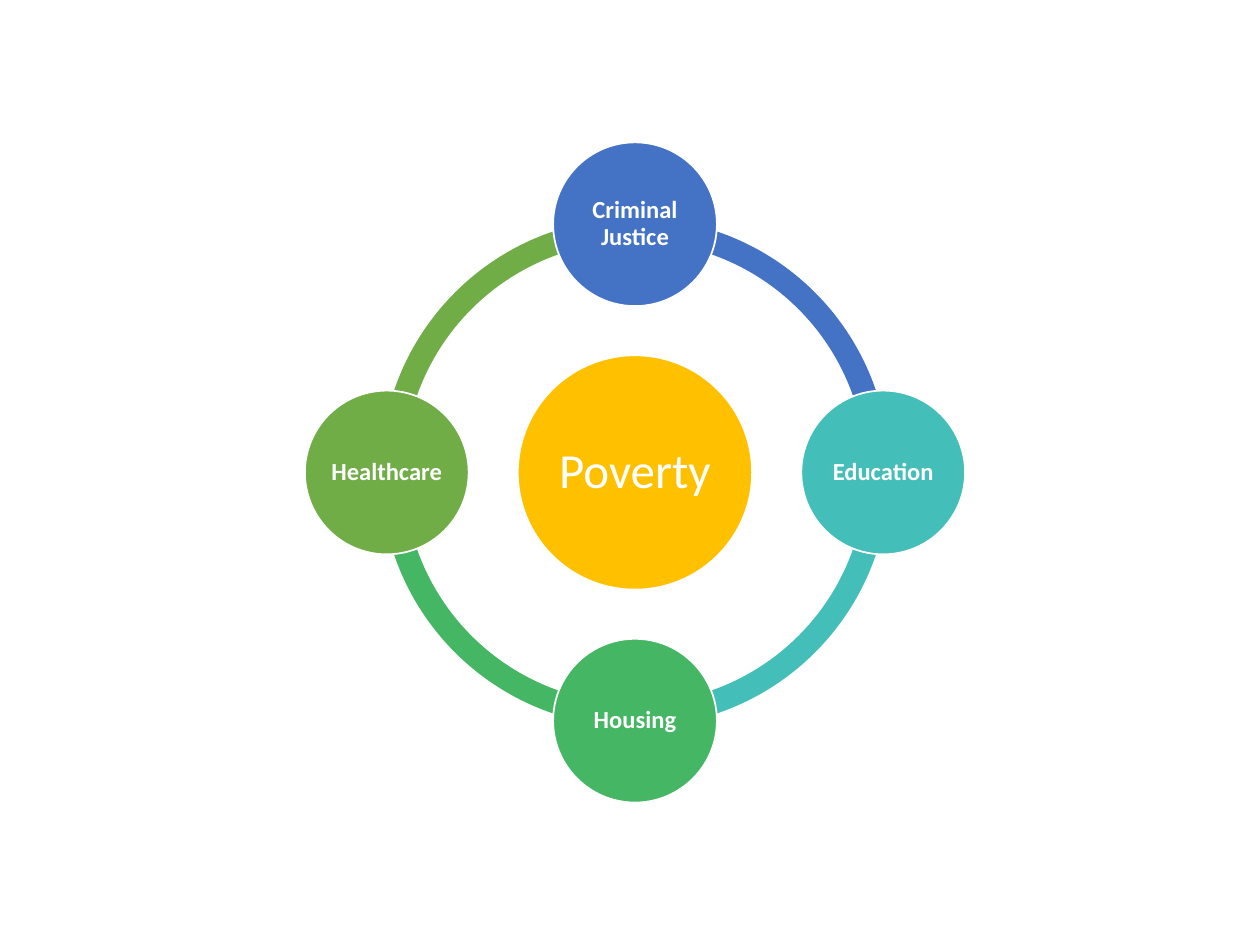
"""Build a slide with four linked systems circling poverty."""
from math import cos, radians, sin

from pptx import Presentation
from pptx.dml.color import RGBColor
from pptx.enum.shapes import MSO_SHAPE
from pptx.enum.text import MSO_ANCHOR, PP_ALIGN
from pptx.util import Inches, Pt

COLORS = {
    "white": "FFFFFF",
    "gold": "FFC000",
    "blue": "4472C4",
    "teal": "43BEB9",
    "green": "45B664",
    "olive": "70AD47",
}
NODES = [
    ("Criminal Justice", "blue"),
    ("Education", "teal"),
    ("Housing", "green"),
    ("Healthcare", "olive"),
]
MID_X, MID_Y = 5.04, 3.75
ORBIT = 1.97
RING = 4.04
ANGLE_UNIT = 0.6


def color(name):
    return RGBColor.from_string(COLORS[name])


def add_round(slide, kind, x, y, size, fill):
    shape = slide.shapes.add_shape(
        kind, Inches(x - size / 2), Inches(y - size / 2), Inches(size), Inches(size)
    )
    shape.shadow.inherit = False
    shape.fill.solid()
    shape.fill.fore_color.rgb = color(fill)
    return shape


def add_arc(slide, start, fill):
    arc = add_round(slide, MSO_SHAPE.BLOCK_ARC, MID_X, MID_Y, RING, fill)
    arc.line.fill.background()
    arc.adjustments[0] = start * ANGLE_UNIT
    arc.adjustments[1] = (start + 90) % 360 * ANGLE_UNIT
    arc.adjustments[2] = 0.046


def add_circle(slide, x, y, size, fill, text, points, bold):
    circle = add_round(slide, MSO_SHAPE.OVAL, x, y, size, fill)
    circle.line.color.rgb = color("white")
    circle.line.width = Pt(1)
    frame = circle.text_frame
    frame.text = text
    frame.word_wrap = True
    frame.vertical_anchor = MSO_ANCHOR.MIDDLE
    frame.margin_left = frame.margin_right = 0
    frame.margin_top = frame.margin_bottom = 0
    para = frame.paragraphs[0]
    para.alignment = PP_ALIGN.CENTER
    para.line_spacing = 0.9
    font = para.runs[0].font
    font.name = "Calibri"
    font.size = Pt(points)
    font.bold = bold
    font.color.rgb = color("white")


def main():
    deck = Presentation()
    deck.slide_width, deck.slide_height = Inches(10), Inches(7.5)
    slide = deck.slides.add_slide(deck.slide_layouts[6])
    turns = [(270 + 90 * i) % 360 for i in range(len(NODES))]
    for turn, (_, fill) in reversed(list(zip(turns, NODES))):
        add_arc(slide, turn, fill)
    add_circle(slide, MID_X, MID_Y, 1.86, "gold", "Poverty", 28, False)
    for turn, (text, fill) in zip(turns, NODES):
        x = MID_X + ORBIT * cos(radians(turn))
        y = MID_Y + ORBIT * sin(radians(turn))
        add_circle(slide, x, y, 1.3, fill, text, 14, True)
    deck.save("out.pptx")


if __name__ == "__main__":
    main()
